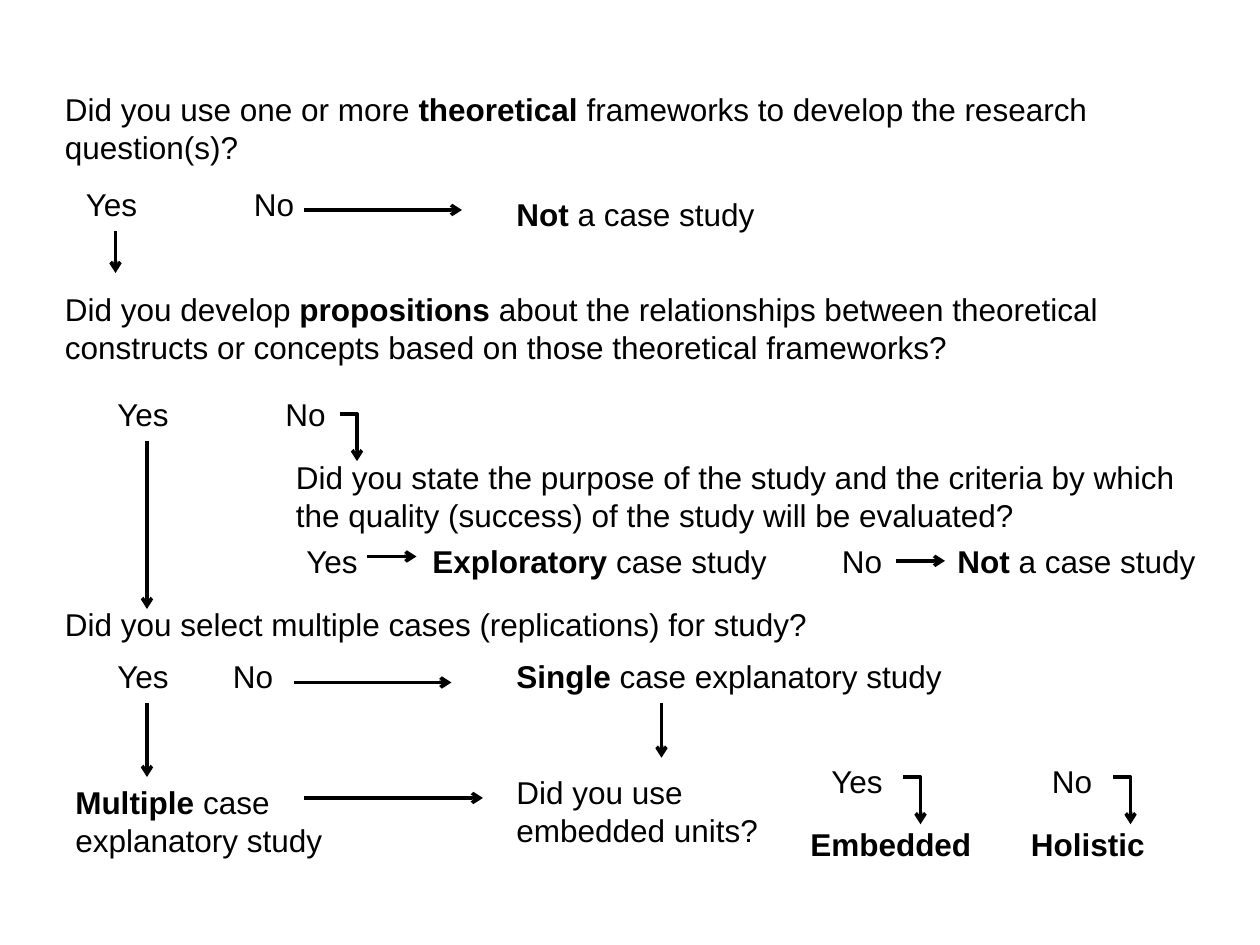
from lxml import etree
from pptx import Presentation
from pptx import util as u
from pptx.dml.color import RGBColor
from pptx.enum import shapes, text
from pptx.oxml.ns import qn

BLACK = RGBColor(0, 0, 0)
WHITE = RGBColor(255, 255, 255)
FONT = "Arial"
FONT_SIZE = 18
LINE_WIDTH = 2
HEIGHTS = {1: 29, 2: 51}  # box height by number of text lines
ANSWER_WIDTHS = {"Yes": 45, "No": 38}
ELBOW_SIZE = (10, 27)

# left, top, width, lines, text; ** encloses bold words
STATEMENTS = [
    (30, 48, 642, 2, "Did you use one or more **theoretical** frameworks to develop the research question(s)?"),
    (288, 108, 164, 1, "**Not** a case study"),
    (30, 162, 642, 2, "Did you develop **propositions** about the relationships between theoretical "
                      "constructs or concepts based on those theoretical frameworks?"),
    (162, 258, 528, 2, "Did you state the purpose of the study and the criteria by which the quality "
                       "(success) of the study will be evaluated?"),
    (240, 306, 216, 1, "**Exploratory **case study"),
    (30, 342, 456, 1, "Did you select multiple cases (replications) for study?"),
    (288, 372, 276, 1, "**Single **case explanatory study"),
    (36, 444, 186, 2, "**Multiple **case explanatory study"),
    (288, 438, 162, 2, "Did you use embedded units?"),
    (456, 468, 108, 1, "**Embedded**"),
    (582, 468, 90, 1, "**Holistic**"),
]

# top of the row, then left edge of each answer
ANSWER_ROWS = [
    (102, {"Yes": 42, "No": 138}),
    (222, {"Yes": 60, "No": 156}),
    (306, {"Yes": 168}),
    (372, {"Yes": 60, "No": 126}),
    (432, {"Yes": 468, "No": 594}),
]

# A joined pair: the answer and the result it leads to
NOT_EXPLORATORY = (474, 306, ANSWER_WIDTHS["No"], 1, "No")
NOT_A_CASE_STUDY = (540, 306, 156, 1, "**Not** a case study")

# x, y, length
RIGHT_ARROWS = [(174, 120, 90), (168, 390, 90), (210, 318, 28), (174, 456, 102)]
DOWN_ARROWS = [(66, 132, 24), (84, 252, 96), (84, 402, 42), (378, 402, 31)]
# x, y of the start
ELBOW_ARROWS = [(194, 236.5), (516, 444), (636, 444)]


def add_text(slide, left, top, width, lines, content, wrap=True):
    box = slide.shapes.add_textbox(u.Pt(left), u.Pt(top), u.Pt(width), u.Pt(HEIGHTS[lines]))
    frame = box.text_frame
    frame.word_wrap = wrap
    frame.auto_size = text.MSO_AUTO_SIZE.SHAPE_TO_FIT_TEXT
    paragraph = frame.paragraphs[0]
    for index, part in enumerate(content.split("**")):
        if part:
            run = paragraph.add_run()
            run.text = part
            run.font.name = FONT
            run.font.size = u.Pt(FONT_SIZE)
            run.font.bold = index % 2 == 1
            run.font.color.rgb = BLACK
    return box


def add_arrow(slide, x, y, across, down, kind=shapes.MSO_CONNECTOR.STRAIGHT):
    arrow = slide.shapes.add_connector(kind, u.Pt(x), u.Pt(y), u.Pt(x + across), u.Pt(y + down))
    arrow.line.color.rgb = BLACK
    arrow.line.width = u.Pt(LINE_WIDTH)
    properties = arrow.element.spPr
    etree.SubElement(properties.find(qn("a:ln")), qn("a:tailEnd"), type="arrow")
    etree.SubElement(properties, qn("a:effectLst"))
    if kind == shapes.MSO_CONNECTOR.ELBOW:
        # A single bend, in place of the default two
        properties.find(qn("a:prstGeom")).set("prst", "bentConnector2")
    return arrow


def main():
    presentation = Presentation()
    presentation.slide_width, presentation.slide_height = u.Pt(720), u.Pt(540)
    slide = presentation.slides.add_slide(presentation.slide_layouts[6])
    slide.background.fill.solid()
    slide.background.fill.fore_color.rgb = WHITE

    for statement in STATEMENTS:
        add_text(slide, *statement)
    for top, answers in ANSWER_ROWS:
        for answer, left in answers.items():
            add_text(slide, left, top, ANSWER_WIDTHS[answer], 1, answer, wrap=False)

    for x, y, length in RIGHT_ARROWS:
        add_arrow(slide, x, y, length, 0)
    for x, y, length in DOWN_ARROWS:
        add_arrow(slide, x, y, 0, length)
    for x, y in ELBOW_ARROWS:
        add_arrow(slide, x, y, *ELBOW_SIZE, kind=shapes.MSO_CONNECTOR.ELBOW)

    answer_box = add_text(slide, *NOT_EXPLORATORY, wrap=False)
    result_box = add_text(slide, *NOT_A_CASE_STUDY)
    joined_arrow = add_arrow(slide, 512, 320.5, 28, 0)
    joined_arrow.begin_connect(answer_box, 3)
    joined_arrow.end_connect(result_box, 1)

    presentation.save("out.pptx")


if __name__ == "__main__":
    main()
